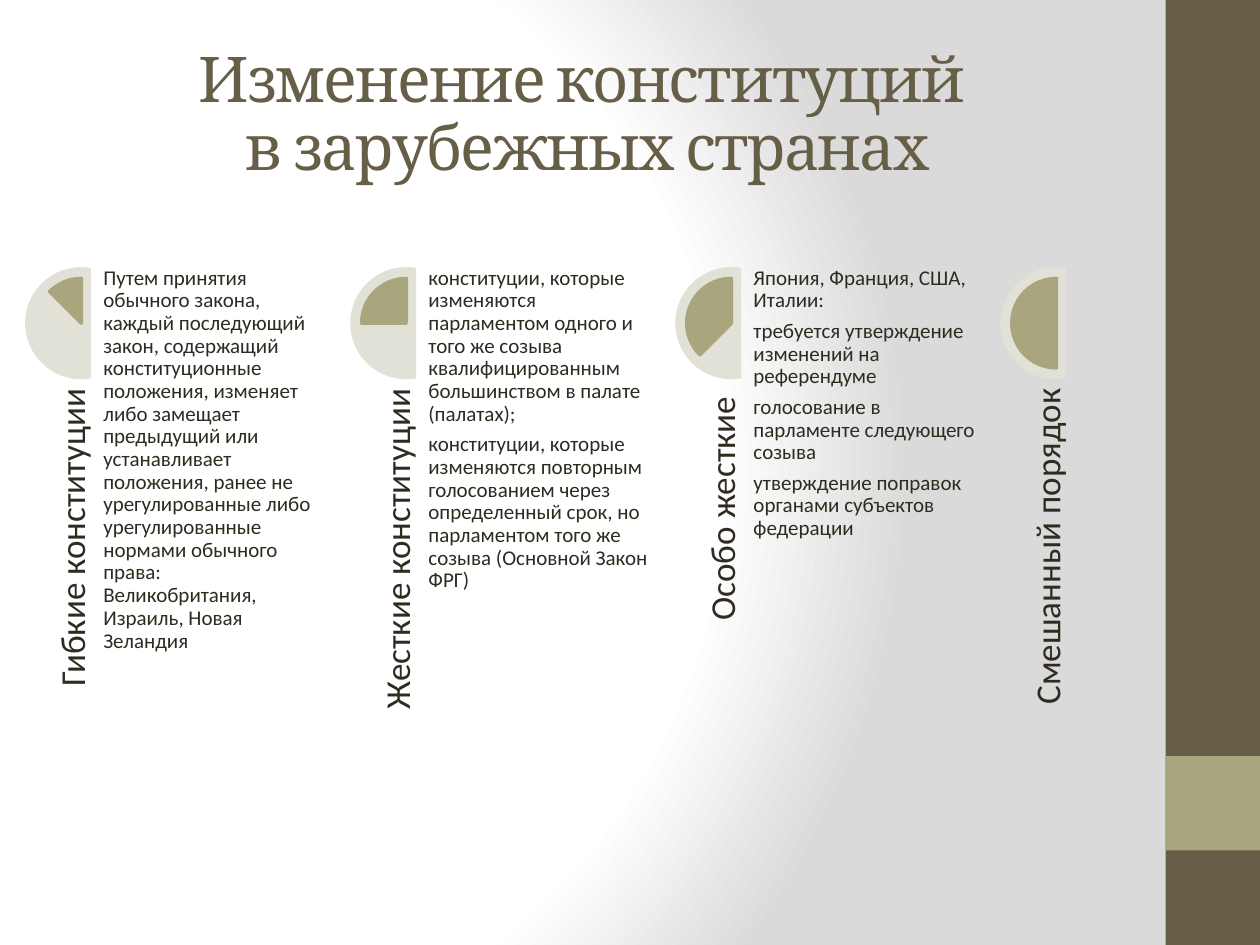
"""Build a slide on how constitutions are amended in foreign countries."""
from pptx import Presentation
from pptx import util as u
from pptx.dml.color import RGBColor
from pptx.enum import shapes, text
from pptx.oxml import parse_xml
from pptx.oxml.ns import nsdecls

TITLE = "Изменение конституций \nв зарубежных странах"
KINDS = [
    ("Гибкие конституции", [
        "Путем принятия обычного закона, каждый последующий закон, содержащий "
        "конституционные положения, изменяет либо замещает предыдущий или "
        "устанавливает положения, ранее не урегулированные либо "
        "урегулированные нормами обычного права: \n"
        "Великобритания, Израиль, Новая Зеландия"]),
    ("Жесткие конституции", [
        "конституции, которые изменяются парламентом одного и того же созыва "
        "квалифицированным большинством в палате (палатах);",
        "конституции, которые изменяются повторным голосованием через "
        "определенный срок, но парламентом того же созыва (Основной Закон ФРГ)"]),
    ("Особо жесткие ", [
        "Япония, Франция, США, Италии:",
        "требуется утверждение изменений на референдуме",
        "голосование в парламенте следующего созыва",
        "утверждение поправок органами субъектов федерации"]),
    ("Смешанный порядок", []),
]
THEME = {
    "dark": "675E47", "olive": "A9A57C", "pale": "E2E1D7", "ink": "2F2B20",
    "white": "FFFFFF", "gray": "DADADA",
    "head": "Cambria", "body": "Calibri",
    "title": 36, "label": 20, "small": 12,
}
LEFT, TOP, PITCH = 0.2, 2.12, 2.58
SHAPE = shapes.MSO_SHAPE
ALIGN = text.PP_ALIGN
ANCHOR = text.MSO_ANCHOR


def color(name):
    return RGBColor.from_string(THEME[name])


def box(at):
    return [u.Inches(n) for n in at]


def paint(slide):
    stops = "".join(
        f'<a:gs pos="{pos * 1000}"><a:srgbClr val="{THEME[name]}"/></a:gs>'
        for pos, name in [(0, "white"), (75, "white"), (100, "gray")])
    slide.element.cSld.insert(0, parse_xml(
        f'<p:bg {nsdecls("p", "a")}><p:bgPr><a:gradFill rotWithShape="1">'
        f'<a:gsLst>{stops}</a:gsLst><a:path path="circle">'
        '<a:fillToRect l="20000" t="50000" r="100000" b="50000"/></a:path>'
        '</a:gradFill><a:effectLst/></p:bgPr></p:bg>'))


def draw(slide, kind, at, fill, turns=(), edge=None):
    shape = slide.shapes.add_shape(kind, *box(at))
    shape.shadow.inherit = False
    shape.fill.solid()
    shape.fill.fore_color.rgb = color(fill)
    if edge:
        shape.line.color.rgb = color(fill)
        shape.line.width = u.Pt(edge)
    else:
        shape.line.fill.background()
    for i, angle in enumerate(turns):
        shape.adjustments[i] = angle * 0.6


def write(slide, at, paras, size, ink="ink", face="body", align=ALIGN.LEFT,
          anchor=ANCHOR.TOP, after=0, track=0, turn=0):
    shape = slide.shapes.add_textbox(*box(at))
    shape.rotation = turn
    frame = shape.text_frame
    frame.word_wrap = True
    frame.vertical_anchor = anchor
    frame.margin_left = frame.margin_right = 0
    frame.margin_top = frame.margin_bottom = 0
    for i, words in enumerate(paras):
        para = frame.add_paragraph() if i else frame.paragraphs[0]
        para.alignment = align
        para.line_spacing = 0.9
        para.space_after = u.Pt(after)
        for j, line in enumerate(words.split("\n")):
            if j:
                para.add_line_break()
            run = para.add_run()
            run.text = line
            run.font.size = u.Pt(THEME[size])
            run.font.name = THEME[face]
            run.font.color.rgb = color(ink)
            if track:
                run.font._element.set("spc", str(track * 100))


def column(slide, i, label, paras):
    x = LEFT + i * PITCH
    draw(slide, SHAPE.CHORD, (x, TOP, 0.89, 0.89), "pale", (80, 280))
    draw(slide, SHAPE.PIE, (x + 0.09, TOP + 0.09, 0.71, 0.71), "olive",
         (225 - 45 * i, 270), 2)
    write(slide, (x - 1.02, 4.11, 2.58, 0.53), [label], "label",
          align=ALIGN.RIGHT, anchor=ANCHOR.BOTTOM, turn=270)
    if paras:
        write(slide, (x + 0.62, TOP, 1.78, 3.55), paras, "small", after=4.5)


def main():
    deck = Presentation()
    deck.slide_width, deck.slide_height = u.Inches(10), u.Inches(7.5)
    slide = deck.slides.add_slide(deck.slide_layouts[6])
    paint(slide)
    draw(slide, SHAPE.RECTANGLE, (9.25, 0, 0.75, 7.5), "dark")
    draw(slide, SHAPE.RECTANGLE, (9.25, 6, 0.75, 0.75), "olive")
    write(slide, (0.5, 0.3, 8.33, 1.25), [TITLE], "title", "dark", "head",
          ALIGN.CENTER, ANCHOR.MIDDLE, track=-1)
    for i, (label, paras) in enumerate(KINDS):
        column(slide, i, label, paras)
    deck.save("out.pptx")


if __name__ == "__main__":
    main()
